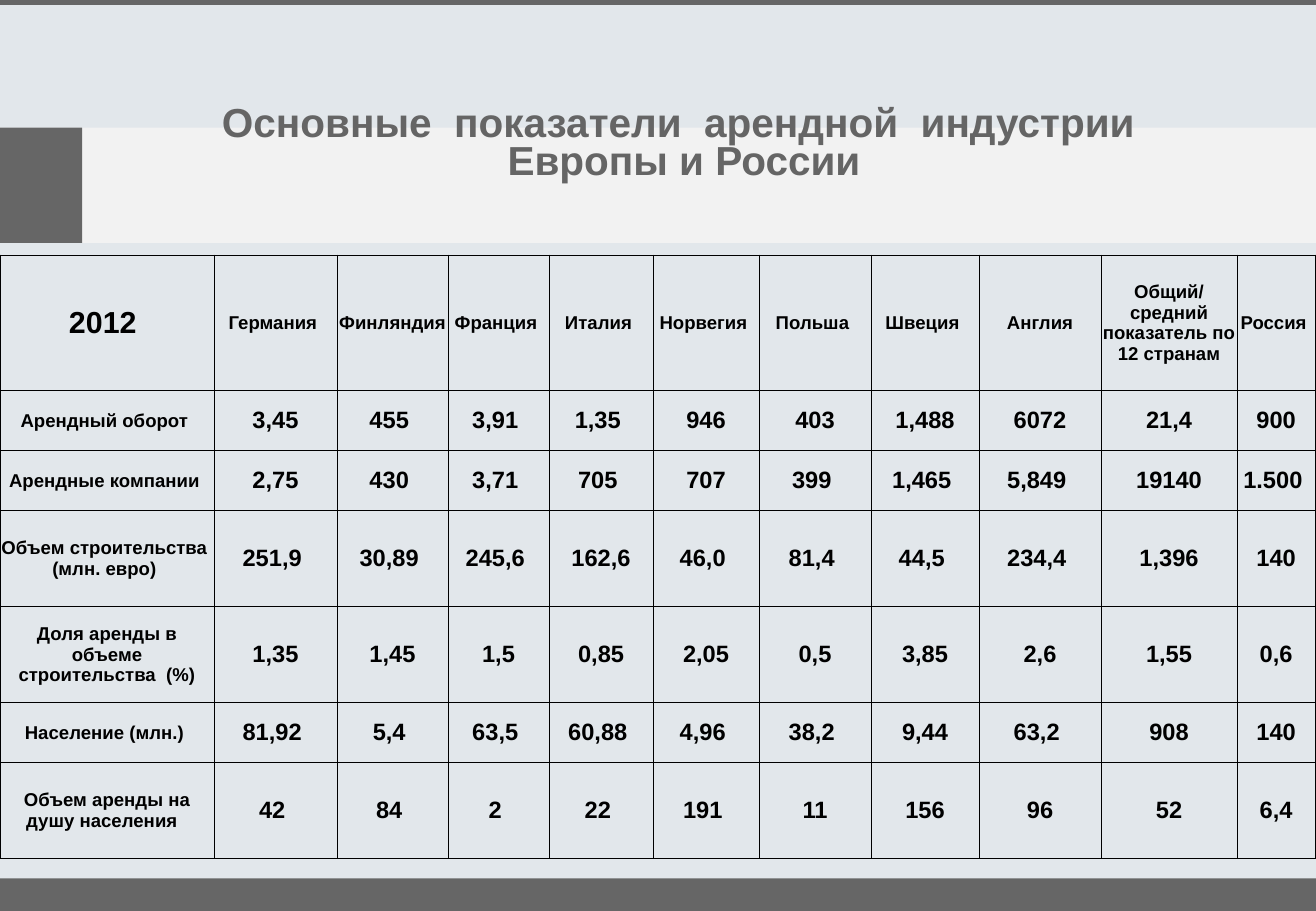
from lxml.etree import SubElement
from pptx import Presentation
from pptx.dml.color import RGBColor as RGB
from pptx.enum.shapes import MSO_SHAPE as SHAPE
from pptx.enum.text import MSO_ANCHOR as ANCHOR, PP_ALIGN as ALIGN
from pptx.oxml.ns import qn
from pptx.util import Pt

COLORS = {"back": "E2E7EB", "dark": "666666", "band": "F2F2F2",
          "title": "656565", "text": "000000"}
W, H = 779.76, 540

prs = Presentation()
prs.slide_width, prs.slide_height = Pt(W), Pt(H)
s = prs.slides.add_slide(prs.slide_layouts[6])
s.background.fill.solid()
s.background.fill.fore_color.rgb = RGB.from_string(COLORS["back"])


def style(p, size, color):
    p.alignment = ALIGN.CENTER
    for r in p.runs:
        r.font.name = "Arial"
        r.font.size = Pt(size)
        r.font.bold = True
        r.font.color.rgb = RGB.from_string(COLORS[color])


def add_borders(cell, width):
    """Draw a solid line on all four sides of a table cell."""
    tc_pr = cell._tc.get_or_add_tcPr()
    for side in ("lnL", "lnR", "lnT", "lnB"):
        ln = SubElement(tc_pr, qn(f"a:{side}"), w=str(Pt(width)))
        fill = SubElement(ln, qn("a:solidFill"))
        SubElement(fill, qn("a:srgbClr"), val=COLORS["text"])


# Background bars
bars = [
    (0, 520.7, W, H - 520.7, "dark"),
    (0, 75.6, W, 68.4, "band"),
    (0, 75.6, 48.7, 68.4, "dark"),
    (0, 0, W, 3, "dark"),
]
for left, top, width, height, color in bars:
    bar = s.shapes.add_shape(SHAPE.RECTANGLE, Pt(left), Pt(top), Pt(width), Pt(height))
    bar.shadow.inherit = False
    bar.fill.solid()
    bar.fill.fore_color.rgb = RGB.from_string(COLORS[color])
    bar.line.fill.background()

# Title
title = s.shapes.add_textbox(Pt(49), Pt(49.5), Pt(706), Pt(72.7))
tf = title.text_frame
tf.word_wrap = True
tf.vertical_anchor = ANCHOR.MIDDLE
tf.text = "Основные  показатели  арендной  индустрии\v Европы и России"
p = tf.paragraphs[0]
p.line_spacing = 0.8
style(p, 24, "title")

# Table of indicators
rows = [
    ["2012 ", "Германия ", "Финляндия ", "Франция ", "Италия ", "Норвегия ", "Польша ",
     "Швеция ", "Англия", "Общий/средний показатель по 12 странам", "Россия "],
    ["Арендный оборот ", "3,45", "455 ", "3,91 ", "1,35 ", "946", "403",
     "1,488", "6072", "21,4", "900"],
    ["Арендные компании ", "2,75", "430 ", "3,71 ", "705 ", "707", "399 ",
     "1,465 ", "5,849 ", "19140", "1.500 "],
    ["Объем строительства  (млн. евро) ", "251,9 ", "30,89 ", "245,6 ", "162,6", "46,0 ",
     "81,4 ", "44,5 ", "234,4 ", "1,396", "140"],
    ["Доля аренды в объеме строительства  (%)", "1,35", "1,45", "1,5", "0,85", "2,05",
     "0,5", "3,85", "2,6", "1,55", "0,6"],
    ["Население (млн.) ", "81,92 ", "5,4 ", "63,5 ", "60,88 ", "4,96 ", "38,2 ",
     "9,44", "63,2 ", "908", "140"],
    ["Объем аренды на душу населения  ", "42 ", "84 ", "2 ", "22 ", "191 ", "11",
     "156", "96", "52", "6,4"],
]
col_widths = [126.8, 72.9, 65.8, 59.9, 61.6, 62.8, 66.4, 64, 72.3, 80.6, 46.4]
row_heights = [80, 35.6, 35.6, 56.9, 56.9, 35.6, 56.9]

frame = s.shapes.add_table(len(rows), len(col_widths), Pt(0), Pt(151.2),
                           Pt(sum(col_widths)), Pt(sum(row_heights)))
table = frame.table
table.first_row = table.horz_banding = False
for column, width in zip(table.columns, col_widths):
    column.width = Pt(width)
for row, height in zip(table.rows, row_heights):
    row.height = Pt(height)

for i, row in enumerate(rows):
    for j, value in enumerate(row):
        cell = table.cell(i, j)
        cell.margin_left = cell.margin_right = cell.margin_top = Pt(0.7)
        cell.margin_bottom = Pt(0)
        cell.vertical_anchor = ANCHOR.MIDDLE
        add_borders(cell, 0.5)
        cell.fill.background()
        cell.text_frame.text = value
        if i == j == 0:
            size = 18
        elif i == 0 or j == 0:
            size = 11
        else:
            size = 14
        style(cell.text_frame.paragraphs[0], size, "text")

prs.save("out.pptx")
